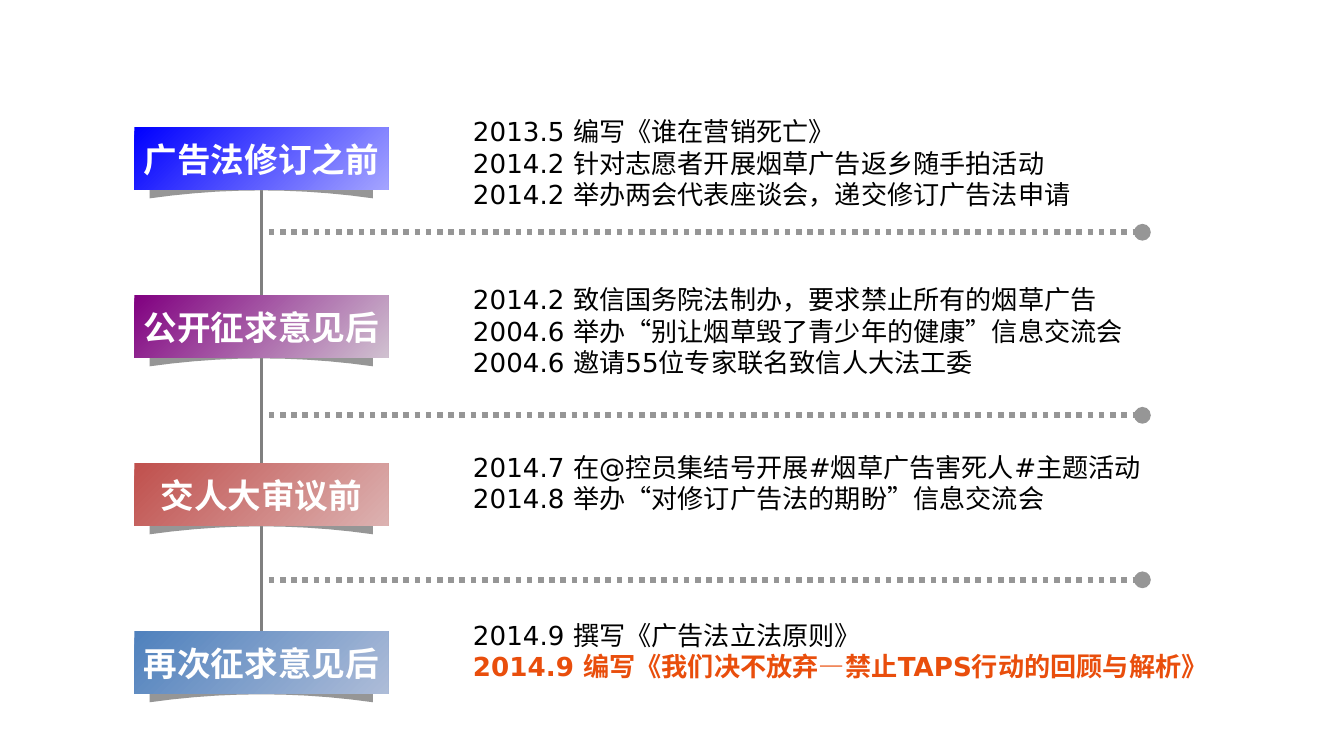
from lxml.etree import SubElement
from pptx import Presentation
from pptx.dml.color import RGBColor
from pptx.enum.dml import MSO_LINE
from pptx.enum.shapes import MSO_CONNECTOR, MSO_SHAPE
from pptx.enum.text import MSO_ANCHOR, PP_ALIGN
from pptx.oxml.ns import qn
from pptx.util import Cm, Pt

THEME = {
    "label_font": "Calibri", "label_size": Pt(18), "label": "FFFFFF",
    "body_font": "DejaVu Sans", "body_size": Pt(14), "body": "000000",
    "accent": "E94E0C", "spine": "808080", "grey": "969696",
}

# label, gradient colours, width of the text box in cm, events (text, highlighted)
STAGES = [
    ("广告法修订之前", ("0000FF", "A4A4FF"), 12.47, [
        ("2013.5 编写《谁在营销死亡》", False),
        ("2014.2 针对志愿者开展烟草广告返乡随手拍活动", False),
        ("2014.2 举办两会代表座谈会，递交修订广告法申请", False)]),
    ("公开征求意见后", ("800080", "D0C1D0"), 13.1, [
        ("2014.2 致信国务院法制办，要求禁止所有的烟草广告", False),
        ("2004.6 举办“别让烟草毁了青少年的健康”信息交流会", False),
        ("2004.6 邀请55位专家联名致信人大法工委", False)]),
    ("交人大审议前", ("C0504D", "DCB2B1"), 13.74, [
        ("2014.7 在@控员集结号开展#烟草广告害死人#主题活动", False),
        ("2014.8 举办“对修订广告法的期盼”信息交流会", False)]),
    ("再次征求意见后", ("4F81BD", "ADBCD8"), 14.55, [
        ("2014.9 撰写《广告法立法原则》", False),
        ("2014.9 编写《我们决不放弃—禁止TAPS行动的回顾与解析》", True)]),
]
SEPARATORS = [4.39, 7.85, 10.96]

# Layout in cm
TOP, PITCH = 2.41, 3.175
LEFT, WIDTH, HEIGHT = 2.54, 4.8, 1.18
CENTRE = LEFT + WIDTH / 2
TEXT_LEFT, TEXT_RISE = 8.69, 0.35
SHADOW_DROP, SHADOW_HALF = 0.76, 2.11
ARC_TOP, ARC_DEPTH, ARC_STEPS = 0.43, 0.15, 10


def rgb(key):
    return RGBColor.from_string(THEME.get(key, key))


def set_font(p, kind, color):
    p.font.name = THEME[kind + "_font"]
    p.font.size = THEME[kind + "_size"]
    p.font.color.rgb = rgb(color)


def add_line(slide, x1, y1, x2, y2, color, width):
    line = slide.shapes.add_connector(
        MSO_CONNECTOR.STRAIGHT, Cm(x1), Cm(y1), Cm(x2), Cm(y2))
    line.line.color.rgb = rgb(color)
    line.line.width = Pt(width)
    SubElement(line._element.spPr, qn("a:effectLst"))
    return line


def add_curl(slide, top):
    """Grey shadow under a label, with a peaked top and a parabola below."""
    def point(t, y):
        return Cm(CENTRE + t * SHADOW_HALF), Cm(top + y)

    ts = [1 - 2 * i / ARC_STEPS for i in range(ARC_STEPS + 1)]
    points = [point(t, ARC_TOP + ARC_DEPTH * t * t) for t in ts]
    points += [point(-1, 0.15), point(0, 0), point(1, 0.15)]
    builder = slide.shapes.build_freeform(*points[0], scale=1.0)
    builder.add_line_segments(points[1:], close=True)
    sp = builder.convert_to_shape()
    sp.shadow.inherit = False
    sp.fill.solid()
    sp.fill.fore_color.rgb = rgb("grey")
    sp.line.fill.background()


def add_label(slide, top, text, colors):
    sp = slide.shapes.add_shape(
        MSO_SHAPE.RECTANGLE, Cm(LEFT), Cm(top), Cm(WIDTH), Cm(HEIGHT))
    sp.shadow.inherit = False
    sp.line.fill.background()
    sp.fill.gradient()
    sp.fill.gradient_angle = 315
    for stop, color, position in zip(sp.fill.gradient_stops, colors, (0, 1)):
        stop.color.rgb = rgb(color)
        stop.position = position
    tf = sp.text_frame
    tf.word_wrap = False
    tf.vertical_anchor = MSO_ANCHOR.MIDDLE
    p = tf.paragraphs[0]
    p.text = text
    p.alignment = PP_ALIGN.CENTER
    set_font(p, "label", "label")
    p.font.bold = True
    return sp


def add_events(slide, top, width, events):
    box = slide.shapes.add_textbox(
        Cm(TEXT_LEFT), Cm(top), Cm(width), Cm(0.25 + 0.6 * len(events)))
    tf = box.text_frame
    tf.word_wrap = True
    for i, (text, highlighted) in enumerate(events):
        p = tf.add_paragraph() if i else tf.paragraphs[0]
        p.text = text
        set_font(p, "body", "accent" if highlighted else "body")
        p.font.bold = highlighted


def add_separator(slide, y):
    line = add_line(slide, 5.08, y, 21.59, y, "grey", 3)
    line.line.dash_style = MSO_LINE.ROUND_DOT
    SubElement(line.line._get_or_add_ln(), qn("a:tailEnd"), type="oval")


def main():
    prs = Presentation()
    prs.slide_width, prs.slide_height = Cm(25.4), Cm(14.29)
    slide = prs.slides.add_slide(prs.slide_layouts[6])

    spine = add_line(slide, CENTRE, TOP, CENTRE, TOP + 3 * PITCH, "spine", 1.5)
    labels = []
    for i, (text, colors, width, events) in enumerate(STAGES):
        top = TOP + i * PITCH
        add_curl(slide, top + SHADOW_DROP)
        labels.append(add_label(slide, top, text, colors))
        add_events(slide, top - TEXT_RISE, width, events)
    spine.begin_connect(labels[0], 2)
    spine.end_connect(labels[-1], 0)
    for y in SEPARATORS:
        add_separator(slide, y)

    prs.save("out.pptx")


if __name__ == "__main__":
    main()
